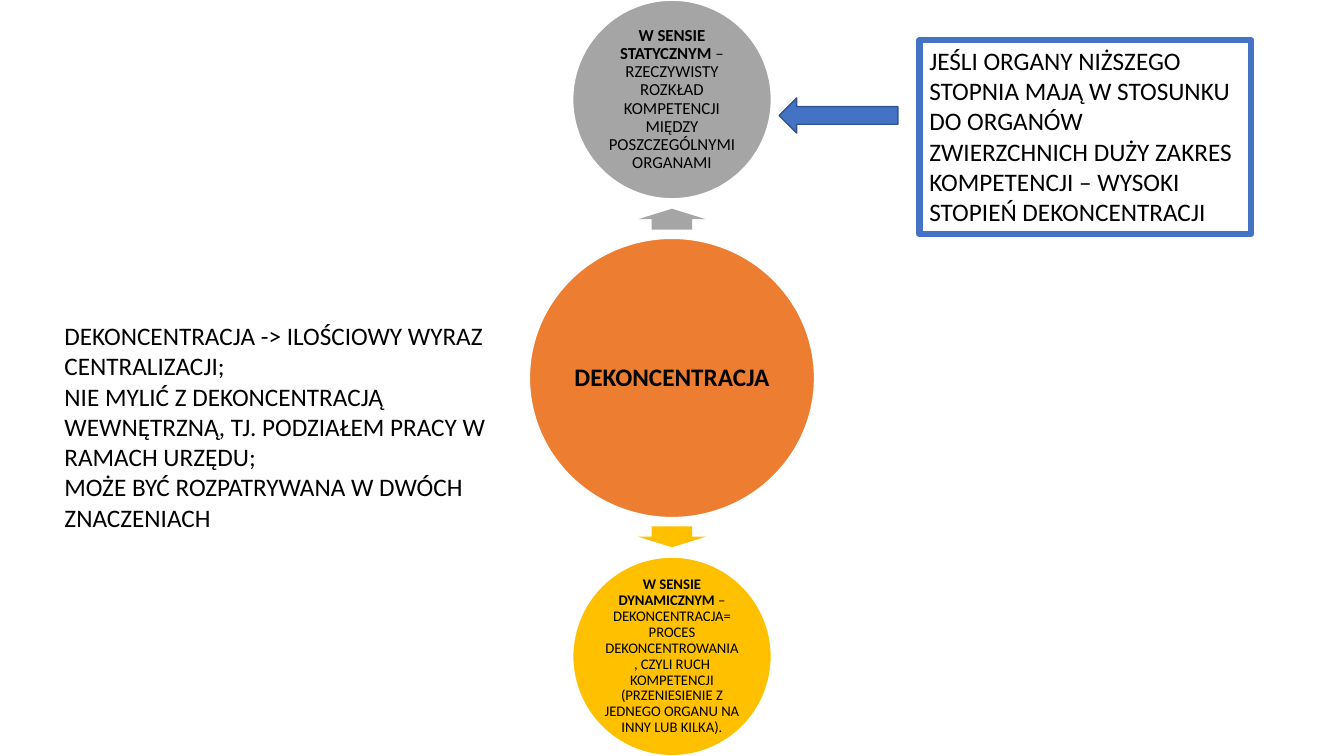
from dataclasses import dataclass

import pptx
import pptx.dml.color
import pptx.enum.shapes
import pptx.enum.text
import pptx.util

SHAPE = pptx.enum.shapes.MSO_SHAPE
ALIGN = pptx.enum.text.PP_ALIGN
ANCHOR = pptx.enum.text.MSO_ANCHOR
COLUMNS, ROWS = 32, 18


@dataclass(frozen=True)
class Theme:
    font: str = "Calibri"
    text: str = "000000"
    paper: str = "FFFFFF"
    core: str = "ED7D31"
    static: str = "A5A5A5"
    dynamic: str = "FFC000"
    accent: str = "4472C4"
    accent_edge: str = "325491"
    body_size: float = 18
    static_size: float = 12
    dynamic_size: float = 10.5
    thin: float = 1
    thick: float = 4.5


class Board:
    def __init__(self, presentation, theme):
        self.theme = theme
        self.slide = presentation.slides.add_slide(presentation.slide_layouts[6])
        self.column = presentation.slide_width / COLUMNS
        self.row = presentation.slide_height / ROWS

    def place(self, left, top, width, height):
        """Turn columns and rows into slide lengths."""
        return (round(left * self.column), round(top * self.row),
                round(width * self.column), round(height * self.row))

    def shape(self, kind, box, fill=None, edge=None, weight=0):
        item = self.slide.shapes.add_shape(kind, *self.place(*box))
        item.shadow.inherit = False
        for part, color in ((item.fill, fill), (item.line.fill, edge)):
            if color is None:
                part.background()
            else:
                part.solid()
                part.fore_color.rgb = pptx.dml.color.RGBColor.from_string(color)
        if edge:
            item.line.width = pptx.util.Pt(weight)
        return item

    def set_text(self, frame, paragraphs, size, paragraph_format, frame_format):
        """Fill a frame; each paragraph is a list of (text, bold) runs."""
        for name, value in {"word_wrap": True, **frame_format}.items():
            setattr(frame, name, value)
        for index, runs in enumerate(paragraphs):
            paragraph = frame.paragraphs[0] if index == 0 else frame.add_paragraph()
            for name, value in paragraph_format.items():
                setattr(paragraph, name, value)
            for text, bold in runs:
                run = paragraph.add_run()
                run.text = text
                font_format = {"name": self.theme.font, "bold": bold,
                               "size": pptx.util.Pt(size)}
                for name, value in font_format.items():
                    setattr(run.font, name, value)
                run.font.color.rgb = pptx.dml.color.RGBColor.from_string(self.theme.text)

    def circle(self, middle, width, height, fill, runs, size, inset):
        """Draw a labelled circle on the slide's vertical axis."""
        box = (COLUMNS / 2 - width / 2, middle - height / 2, width, height)
        item = self.shape(SHAPE.OVAL, box, fill, self.theme.paper, self.theme.thin)
        sides = ("margin_left", "margin_top", "margin_right", "margin_bottom")
        frame_format = dict.fromkeys(sides, pptx.util.Inches(inset))
        frame_format["vertical_anchor"] = ANCHOR.MIDDLE
        self.set_text(item.text_frame, [runs], size,
                      {"alignment": ALIGN.CENTER, "line_spacing": 0.9}, frame_format)

    def axis_arrow(self, kind, middle, fill):
        width, height = 1.61, 0.5
        box = (COLUMNS / 2 - width / 2, middle - height / 2, width, height)
        arrow = self.shape(kind, box, fill)
        arrow.adjustments[0] = 0.6
        arrow.adjustments[1] = 0.5

    def note(self, box, lines):
        frame = self.slide.shapes.add_textbox(*self.place(*box)).text_frame
        self.set_text(frame, [[(line, False)] for line in lines],
                      self.theme.body_size, {}, {})

    def framed_note(self, box, line):
        item = self.shape(SHAPE.RECTANGLE, box, None, self.theme.accent, self.theme.thick)
        self.set_text(item.text_frame, [[(line, False)]], self.theme.body_size,
                      {"alignment": ALIGN.LEFT}, {"vertical_anchor": ANCHOR.TOP})


def main():
    presentation = pptx.Presentation()
    presentation.slide_width = pptx.util.Inches(13.33)
    presentation.slide_height = pptx.util.Inches(7.5)
    theme = Theme()
    board = Board(presentation, theme)

    center = ROWS / 2
    board.circle(center, 6.79, 6.65, theme.core, [("DEKONCENTRACJA", True)],
                 theme.body_size, 0.03)
    senses = [
        (-1, SHAPE.UP_ARROW, theme.static, theme.static_size, "W SENSIE STATYCZNYM ",
         "– RZECZYWISTY ROZKŁAD KOMPETENCJI MIĘDZY POSZCZEGÓLNYMI ORGANAMI"),
        (1, SHAPE.DOWN_ARROW, theme.dynamic, theme.dynamic_size, "W SENSIE DYNAMICZNYM ",
         "– DEKONCENTRACJA= PROCES DEKONCENTROWANIA, CZYLI RUCH KOMPETENCJI "
         "(PRZENIESIENIE Z JEDNEGO ORGANU NA INNY LUB KILKA)."),
    ]
    for side, arrow, color, size, heading, meaning in senses:
        board.axis_arrow(arrow, center + side * 3.78, color)
        board.circle(center + side * 6.63, 4.73, 4.73, color,
                     [(heading, True), (meaning, False)], size, 0.02)

    board.note((1.3, 7.51, 11.09, 5.33), [
        "DEKONCENTRACJA -> ILOŚCIOWY WYRAZ CENTRALIZACJI;",
        "NIE MYLIĆ Z DEKONCENTRACJĄ WEWNĘTRZNĄ, TJ. PODZIAŁEM PRACY W RAMACH URZĘDU;",
        "MOŻE BYĆ ROZPATRYWANA W DWÓCH ZNACZENIACH",
    ])
    board.framed_note(
        (21.89, 0.96, 7.9, 4.61),
        "JEŚLI ORGANY NIŻSZEGO STOPNIA MAJĄ W STOSUNKU DO ORGANÓW ZWIERZCHNICH "
        "DUŻY ZAKRES KOMPETENCJI – WYSOKI STOPIEŃ DEKONCENTRACJI")
    board.shape(SHAPE.LEFT_ARROW, (18.55, 2.33, 2.83, 0.84),
                theme.accent, theme.accent_edge, theme.thin)
    presentation.save("out.pptx")


if __name__ == "__main__":
    main()
